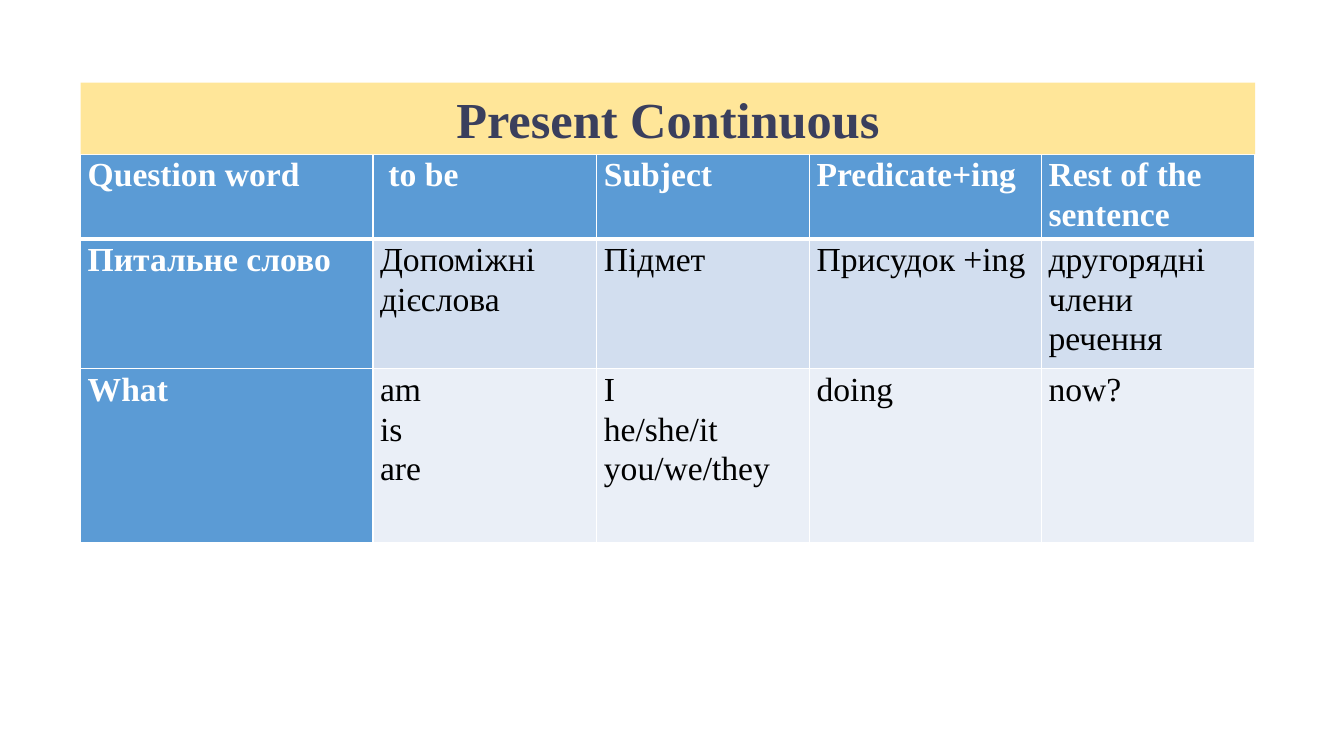
"""Build the Present Continuous question-pattern slide."""
from dataclasses import dataclass

from lxml import etree
from pptx import Presentation
from pptx.dml.color import RGBColor
from pptx.enum import shapes, text
from pptx.oxml import ns
from pptx.util import Inches, Pt


@dataclass(frozen=True)
class Theme:
    """Hold colours, font and type sizes."""
    font: str = "Times New Roman"
    title_size: int = 36
    cell_size: int = 24
    line_spacing: float = 1.07
    banner: str = "FFE699"
    navy: str = "3A3F5D"
    blue: str = "5B9BD5"
    white: str = "FFFFFF"
    black: str = "000000"
    thin: int = 1
    thick: int = 3


@dataclass(frozen=True)
class PatternRow:
    """Describe one row of the sentence pattern."""
    height: float
    fill: str
    entries: tuple[str, ...]


THEME = Theme()
LEFT, BANNER_TOP, WIDTH, BANNER_HEIGHT = 0.8, 0.82, 11.65, 0.71
COLUMN_WIDTHS = (2.9, 2.22, 2.11, 2.3, 2.11)
PATTERN = (
    PatternRow(0.84, THEME.blue, ("Question word", " to be", "Subject", "Predicate+ing",
                                  "Rest of the sentence")),
    PatternRow(1.29, "D2DEEF", ("Питальне слово", "Допоміжні дієслова", "Підмет",
                                "Присудок +ing", "другорядні члени речення")),
    PatternRow(1.72, "EAEFF7", ("What", "am\nis\nare", "I\nhe/she/it\nyou/we/they",
                                "doing", "now?")),
)


def write(frame, words: str, *, size: int, color: str, bold: bool = False,
          align=text.PP_ALIGN.LEFT, spacing: float = 1.0) -> None:
    """Write one paragraph per line of words."""
    frame.word_wrap = True
    frame.text = words
    for paragraph in frame.paragraphs:
        paragraph.alignment = align
        paragraph.line_spacing = spacing
        font = paragraph.runs[0].font
        font.name, font.size, font.bold = THEME.font, Pt(size), bold
        font.color.rgb = RGBColor.from_string(color)


def paint(target, color: str) -> None:
    """Fill a shape or cell with one colour."""
    target.fill.solid()
    target.fill.fore_color.rgb = RGBColor.from_string(color)


def add_borders(cell, *, top: int, bottom: int) -> None:
    """Give a cell white borders of the given point widths."""
    properties = cell._tc.get_or_add_tcPr()
    widths = {"a:lnL": THEME.thin, "a:lnR": THEME.thin, "a:lnT": top, "a:lnB": bottom}
    for place, (tag, width) in enumerate(widths.items()):
        border = etree.Element(ns.qn(tag), w=str(Pt(width)))
        fill = etree.SubElement(border, ns.qn("a:solidFill"))
        etree.SubElement(fill, ns.qn("a:srgbClr"), val=THEME.white)
        properties.insert(place, border)


def add_banner(slide) -> None:
    """Draw the title banner."""
    banner = slide.shapes.add_shape(
        shapes.MSO_SHAPE.RECTANGLE, Inches(LEFT), Inches(BANNER_TOP),
        Inches(WIDTH), Inches(BANNER_HEIGHT))
    banner.shadow.inherit = False
    banner.line.fill.background()
    paint(banner, THEME.banner)
    write(banner.text_frame, "Present Continuous", size=THEME.title_size,
          color=THEME.navy, bold=True, align=text.PP_ALIGN.CENTER)


def add_pattern(slide) -> None:
    """Draw the sentence pattern table."""
    pattern = slide.shapes.add_table(
        len(PATTERN), len(COLUMN_WIDTHS), Inches(LEFT), Inches(BANNER_TOP + BANNER_HEIGHT),
        Inches(WIDTH), Inches(sum(row.height for row in PATTERN))).table
    for column, width in zip(pattern.columns, COLUMN_WIDTHS):
        column.width = Inches(width)
    for r, row in enumerate(PATTERN):
        pattern.rows[r].height = Inches(row.height)
        for c, words in enumerate(row.entries):
            cell = pattern.cell(r, c)
            heading = r == 0 or c == 0
            cell.margin_left = cell.margin_right = Inches(0.07)
            cell.margin_top = cell.margin_bottom = 0
            paint(cell, THEME.blue if heading else row.fill)
            add_borders(cell, top=THEME.thick if r == 1 else THEME.thin,
                        bottom=THEME.thick if r == 0 else THEME.thin)
            write(cell.text_frame, words, size=THEME.cell_size, bold=heading,
                  color=THEME.white if heading else THEME.black,
                  spacing=THEME.line_spacing)


def main() -> None:
    """Build and save the slide."""
    deck = Presentation()
    deck.slide_width, deck.slide_height = Inches(13.33), Inches(7.5)
    slide = deck.slides.add_slide(deck.slide_layouts[6])
    add_pattern(slide)
    add_banner(slide)
    deck.save("out.pptx")


if __name__ == "__main__":
    main()
